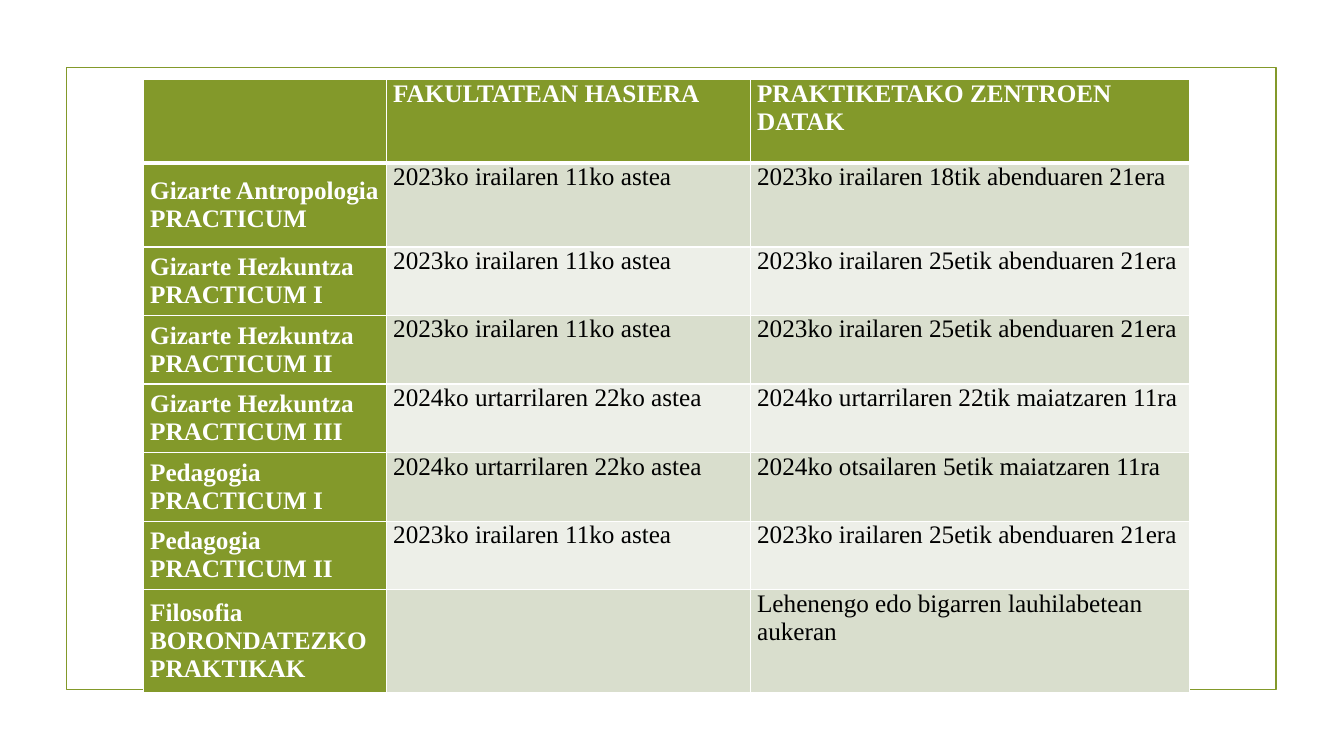
from lxml import etree
from pptx import Presentation
from pptx.dml.color import RGBColor
from pptx.enum.shapes import MSO_SHAPE
from pptx.enum.text import MSO_ANCHOR
from pptx.oxml.ns import qn
from pptx.util import Inches, Pt

RECTANGLE = MSO_SHAPE.RECTANGLE
TOP, MIDDLE = MSO_ANCHOR.TOP, MSO_ANCHOR.MIDDLE

GREEN, WHITE, BLACK = "83992A", "FFFFFF", "000000"
BANDS = ["D9DECD", "EDEFE8"]
FONT = "Times New Roman"
COLUMN_WIDTHS = [2.41, 3.61, 4.36]
ROW_HEIGHTS = [0.83] * 2 + [0.68] * 5 + [1.02]

SEPTEMBER_START = "2023ko irailaren 11ko astea"
JANUARY_START = "2024ko urtarrilaren 22ko astea"
AUTUMN_DATES = "2023ko irailaren 25etik abenduaren 21era"

SCHEDULE = [
    ["", "FAKULTATEAN HASIERA", "PRAKTIKETAKO ZENTROEN DATAK"],
    [["Gizarte Antropologia\nPRACTICUM"], SEPTEMBER_START,
     "2023ko irailaren 18tik abenduaren 21era"],
    [["Gizarte Hezkuntza\nPRACTICUM I"], SEPTEMBER_START, AUTUMN_DATES],
    [["Gizarte Hezkuntza\nPRACTICUM II"], SEPTEMBER_START, AUTUMN_DATES],
    [["Gizarte Hezkuntza\nPRACTICUM III"], JANUARY_START,
     "2024ko urtarrilaren 22tik maiatzaren 11ra"],
    [["Pedagogia\nPRACTICUM I"], JANUARY_START,
     "2024ko otsailaren 5etik maiatzaren 11ra"],
    [["Pedagogia\nPRACTICUM II"], SEPTEMBER_START, AUTUMN_DATES],
    [["Filosofia", "BORONDATEZKO\nPRAKTIKAK"], "",
     "Lehenengo edo bigarren lauhilabetean aukeran"],
]


def color(value):
    return RGBColor.from_string(value)


def add_frame(slide, left, top, width, height):
    frame = slide.shapes.add_shape(
        RECTANGLE, Inches(left), Inches(top), Inches(width), Inches(height))
    frame.shadow.inherit = False
    frame.fill.background()
    frame.line.color.rgb = color(GREEN)
    frame.line.width = Pt(1.25)


def set_borders(cell, widths):
    properties = cell._tc.get_or_add_tcPr()
    for side, width in widths.items():
        border = etree.SubElement(properties, qn(f"a:ln{side}"), w=str(Pt(width)))
        fill = etree.SubElement(border, qn("a:solidFill"))
        etree.SubElement(fill, qn("a:srgbClr"), val=WHITE)


def write_cell(cell, paragraphs, text_color, bold):
    for index, text in enumerate(paragraphs):
        frame = cell.text_frame
        paragraph = frame.add_paragraph() if index else frame.paragraphs[0]
        for line_number, line in enumerate(text.split("\n")):
            if line_number:
                paragraph.add_line_break()
            run = paragraph.add_run()
            run.text = line
            run.font.name = FONT
            run.font.size = Pt(18)
            run.font.bold = bold
            run.font.color.rgb = color(text_color)


def add_schedule(slide, left, top):
    schedule = slide.shapes.add_table(
        len(ROW_HEIGHTS), len(COLUMN_WIDTHS), Inches(left), Inches(top),
        Inches(sum(COLUMN_WIDTHS)), Inches(sum(ROW_HEIGHTS))).table
    for column, width in zip(schedule.columns, COLUMN_WIDTHS):
        column.width = Inches(width)
    for row_number, (row, height) in enumerate(zip(schedule.rows, ROW_HEIGHTS)):
        row.height = Inches(height)
        for column_number, content in enumerate(SCHEDULE[row_number]):
            cell = schedule.cell(row_number, column_number)
            heading = row_number == 0 or column_number == 0
            cell.margin_left = cell.margin_right = Inches(0.07)
            cell.margin_top = cell.margin_bottom = 0
            cell.vertical_anchor = MIDDLE if row_number and not column_number else TOP
            set_borders(cell, {"L": 1, "R": 1,
                               "T": 3 if row_number == 1 else 1,
                               "B": 3 if row_number == 0 else 1})
            cell.fill.solid()
            cell.fill.fore_color.rgb = color(
                GREEN if heading else BANDS[(row_number - 1) % 2])
            paragraphs = [content] if isinstance(content, str) else content
            if content:
                write_cell(cell, paragraphs, WHITE if heading else BLACK, heading)


def main():
    presentation = Presentation()
    presentation.slide_width = Inches(13.33)
    presentation.slide_height = Inches(7.5)
    slide = presentation.slides.add_slide(presentation.slide_layouts[6])
    add_frame(slide, 0.66, 0.67, 12, 6.17)
    add_schedule(slide, 1.42, 0.79)
    presentation.save("out.pptx")


if __name__ == "__main__":
    main()
